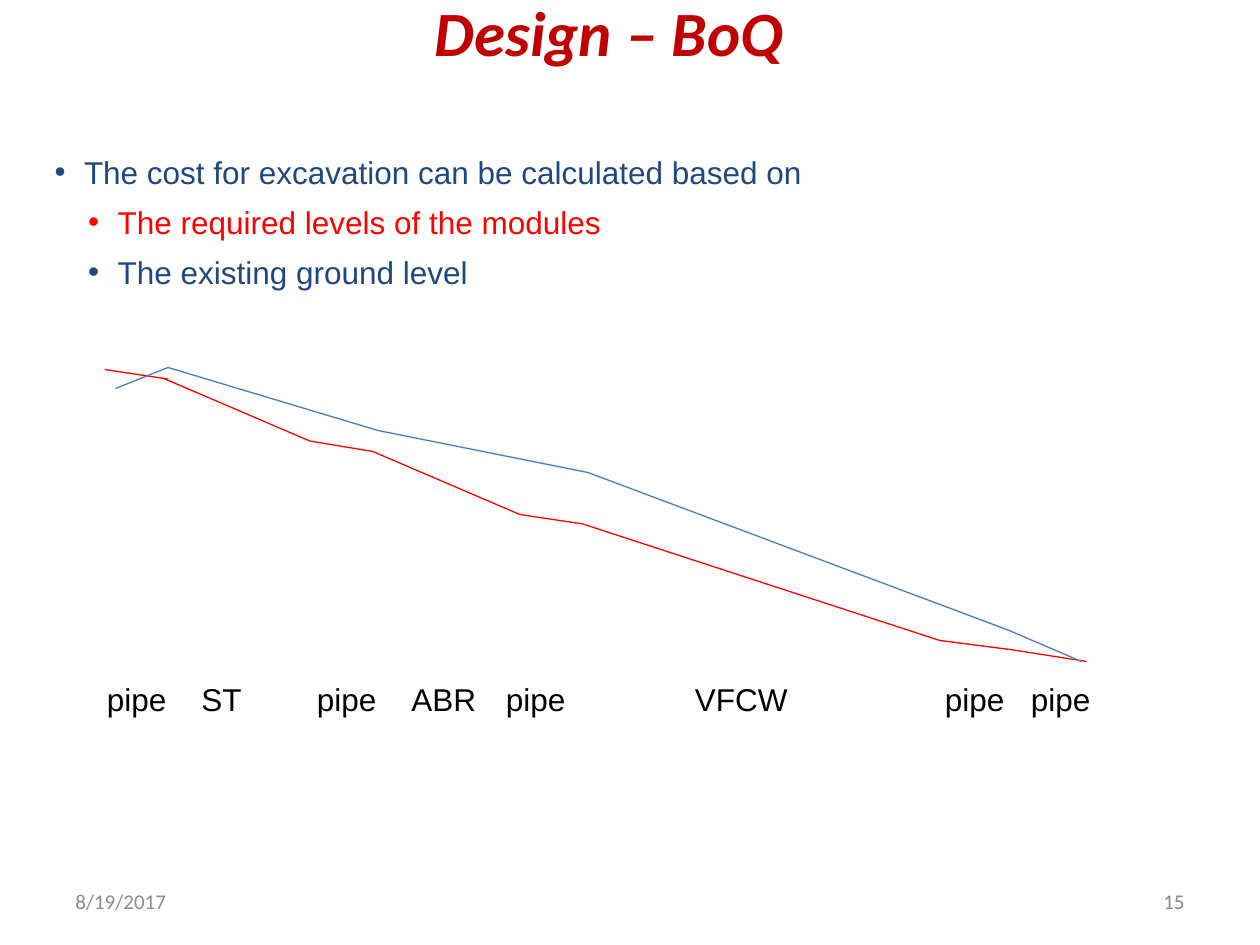
from itertools import pairwise

from lxml import etree
from pptx import Presentation
from pptx import util as u
from pptx.dml.color import RGBColor
from pptx.enum import shapes, text
from pptx.oxml import ns

PX = 7620
TITLE_RED = RGBColor(0xC0, 0x00, 0x00)
NAVY = RGBColor(0x1F, 0x49, 0x7D)
RED = RGBColor(0xFF, 0x00, 0x00)
BLUE = RGBColor(0x4B, 0x7E, 0xBC)
BLACK = RGBColor(0x00, 0x00, 0x00)
GREY = RGBColor(0x8C, 0x8C, 0x8C)
NUMBER_GREY = RGBColor(0x89, 0x89, 0x89)

TITLE_FONT = {"name": "Calibri", "size": u.Pt(36), "bold": True, "italic": True}
BODY_FONT = {"name": "Arial", "size": u.Pt(18)}
FOOTER_FONT = {"name": "Calibri", "size": u.Pt(12)}

BULLETS = [
    ("The cost for excavation can be calculated based on", 0, NAVY),
    ("The required levels of the modules", 1, RED),
    ("The existing ground level", 1, NAVY),
]
INLET_PIPE = [(100, 352), (160, 361)]
MODULE_LEVELS = [(155, 360), (295, 420), (355, 430), (495, 490),
                 (555, 499), (895, 610), (965, 619), (1035, 630)]
GROUND_LEVEL = [(110, 370), (160, 350), (360, 410), (560, 450),
                (960, 600), (1030, 630)]
MODULES = [("pipe", 90, 100), ("ST", 180, 100), ("pipe", 290, 100),
           ("ABR", 380, 100), ("pipe", 470, 100), ("VFCW", 650, 130),
           ("pipe", 888, 100), ("pipe", 970, 100)]


class SlideBuilder:
    def __init__(self, presentation):
        self.slide = presentation.slides.add_slide(presentation.slide_layouts[1])

    def apply(self, target, values):
        for name, value in values.items():
            setattr(target, name, value)

    def place(self, shape, left, top, width, height):
        self.apply(shape, {"left": left * PX, "top": top * PX,
                           "width": width * PX, "height": height * PX})

    def style(self, paragraph, font, color):
        self.apply(paragraph.font, font)
        paragraph.font.color.rgb = color

    def title(self, wording, box):
        shape = self.slide.shapes.title
        self.place(shape, *box)
        frame = shape.text_frame
        self.apply(frame, {"text": wording, "word_wrap": True,
                           "auto_size": text.MSO_AUTO_SIZE.NONE,
                           "vertical_anchor": text.MSO_ANCHOR.MIDDLE})
        frame.paragraphs[0].alignment = text.PP_ALIGN.CENTER
        self.style(frame.paragraphs[0], TITLE_FONT, TITLE_RED)

    def bullets(self, items, box):
        shape = self.slide.placeholders[1]
        self.place(shape, *box)
        frame = shape.text_frame
        self.apply(frame, {"text": "\n".join(item[0] for item in items),
                           "word_wrap": True,
                           "auto_size": text.MSO_AUTO_SIZE.NONE,
                           "vertical_anchor": text.MSO_ANCHOR.MIDDLE})
        for paragraph, (_, level, color) in zip(frame.paragraphs, items):
            self.apply(paragraph, {"level": level, "space_before": u.Pt(0),
                                   "space_after": u.Pt(7)})
            properties = paragraph._p.get_or_add_pPr()
            properties.set("marL", str((28 + 32 * level) * PX))
            properties.set("indent", str(-28 * PX))
            etree.SubElement(properties, ns.qn("a:buFont")).set("typeface", "Arial")
            etree.SubElement(properties, ns.qn("a:buChar")).set("char", "•")
            self.style(paragraph, BODY_FONT, color)

    def label(self, wording, box, font, color,
              align=text.PP_ALIGN.LEFT, anchor=text.MSO_ANCHOR.TOP):
        shape = self.slide.shapes.add_textbox(0, 0, 0, 0)
        self.place(shape, *box)
        frame = shape.text_frame
        self.apply(frame, {"text": wording, "word_wrap": True,
                           "vertical_anchor": anchor})
        frame.paragraphs[0].alignment = align
        self.style(frame.paragraphs[0], font, color)

    def profile(self, points, color):
        for start, end in pairwise(points):
            line = self.slide.shapes.add_connector(
                shapes.MSO_CONNECTOR.STRAIGHT,
                *(value * PX for value in start + end))
            line.line.color.rgb = color
            line.line.width = u.Pt(0.75)
            etree.SubElement(line._element.spPr, ns.qn("a:effectLst"))


def main():
    presentation = Presentation()
    presentation.slide_width = 1200 * PX
    presentation.slide_height = 900 * PX
    builder = SlideBuilder(presentation)
    builder.title("Design – BoQ", (40, -20, 1080, 100))
    builder.bullets(BULLETS, (40, 140, 940, 142))
    for wording, left, align, color in (
            ("8/19/2017", 60, text.PP_ALIGN.LEFT, GREY),
            ("15", 860, text.PP_ALIGN.RIGHT, NUMBER_GREY)):
        builder.label(wording, (left, 834, 280, 48), FOOTER_FONT, color,
                      align, text.MSO_ANCHOR.MIDDLE)
    for points, color in ((INLET_PIPE, RED), (MODULE_LEVELS, RED),
                          (GROUND_LEVEL, BLUE)):
        builder.profile(points, color)
    for wording, left, width in MODULES:
        builder.label(wording, (left, 642, width, 48), BODY_FONT, BLACK)
    presentation.save("out.pptx")


if __name__ == "__main__":
    main()
